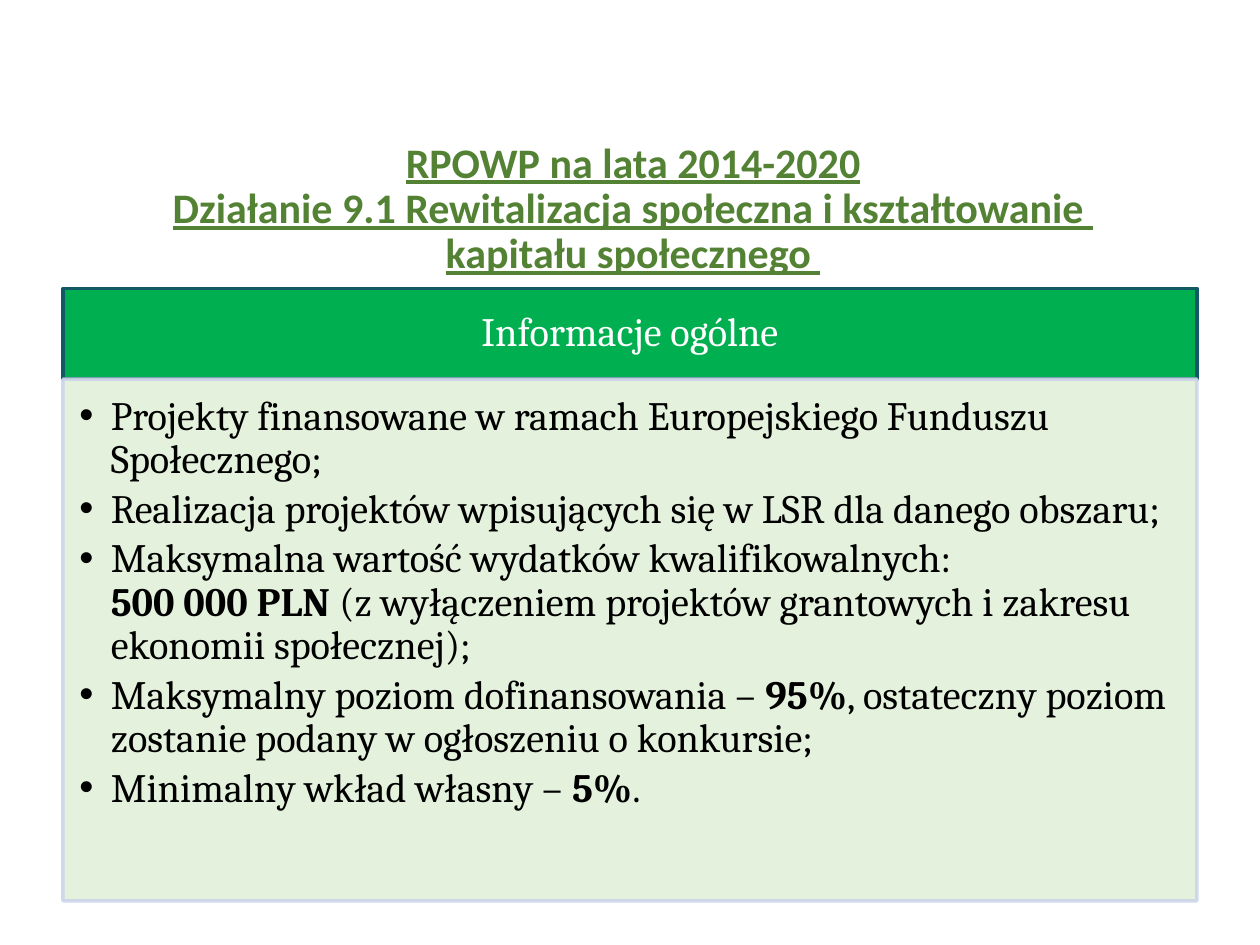
from lxml.etree import SubElement
from pptx import Presentation
from pptx.dml.color import RGBColor
from pptx.enum.shapes import MSO_SHAPE as SHAPE
from pptx.enum.text import MSO_ANCHOR as ANCHOR, PP_ALIGN as ALIGN
from pptx.oxml.ns import qn
from pptx.util import Inches, Pt

WIDTH, HEIGHT = Inches(10), Inches(7.5)
WHITE = RGBColor(0xFF, 0xFF, 0xFF)
BLACK = RGBColor(0x00, 0x00, 0x00)
OLIVE = RGBColor(0x54, 0x82, 0x35)
GREEN = RGBColor(0x00, 0xB0, 0x50)
TEAL = RGBColor(0x11, 0x59, 0x64)
PALE_GREEN = RGBColor(0xE2, 0xF0, 0xD9)
PALE_BLUE = RGBColor(0xCC, 0xD5, 0xEA)

TITLE_FONT = dict(name="Calibri", size=Pt(24), bold=True, underline=True)
PANEL_FONT = dict(name="Cambria", size=Pt(23))
TITLE = ("RPOWP na lata 2014-2020\v"
         "Działanie 9.1 Rewitalizacja społeczna i kształtowanie \v"
         "kapitału społecznego ")
HEADING = "Informacje ogólne"
POINTS = [
    [("Projekty finansowane w ramach Europejskiego Funduszu Społecznego;", False)],
    [("Realizacja projektów wpisujących się w LSR dla danego obszaru;", False)],
    [("Maksymalna wartość wydatków kwalifikowalnych:", False),
     ("\v500 000 PLN ", True),
     ("(z wyłączeniem projektów grantowych i zakresu ekonomii społecznej);", False)],
    [("Maksymalny poziom dofinansowania – ", False), ("95%", True),
     (", ostateczny poziom zostanie podany w ogłoszeniu o konkursie;", False)],
    [("Minimalny wkład własny – ", False), ("5%", True), (".", False)],
]


def apply(target, values):
    """Set every attribute named in a dict."""
    for name, value in values.items():
        setattr(target, name, value)


def place(sp, box):
    """Position a shape in a box given in inches."""
    sp.left, sp.top, sp.width, sp.height = map(Inches, box)


def set_insets(tf, left, top, right, bottom):
    """Set the four text margins in inches."""
    apply(tf, dict(margin_left=Inches(left), margin_top=Inches(top),
                   margin_right=Inches(right), margin_bottom=Inches(bottom)))


def add_run(p, text, color, **font):
    """Append a run, turning a leading vertical tab into a line break."""
    if text.startswith("\v"):
        p.add_line_break()
    r = p.add_run()
    r.text = text.lstrip("\v")
    apply(r.font, font)
    r.font.color.rgb = color


def set_alpha(color_format, percent):
    """Make a solid fill partly transparent."""
    for color in color_format._xPr.iter(qn("a:srgbClr")):
        SubElement(color, qn("a:alpha"), val=str(percent * 1000))


def add_panel(slide, box, fill, line):
    """Add an outlined rectangle and return it."""
    sp = slide.shapes.add_shape(SHAPE.RECTANGLE, *map(Inches, box))
    sp.shadow.inherit = False
    sp.fill.solid()
    sp.fill.fore_color.rgb = fill
    sp.line.color.rgb = line
    sp.line.width = Pt(2)
    sp.text_frame.word_wrap = True
    return sp


def add_title(slide, box):
    """Fill and format the title placeholder."""
    sp = slide.shapes.title
    place(sp, box)
    tf = sp.text_frame
    apply(tf, dict(word_wrap=True, vertical_anchor=ANCHOR.MIDDLE))
    p = tf.paragraphs[0]
    p.text = TITLE
    apply(p, dict(alignment=ALIGN.CENTER, line_spacing=0.9))
    for r in p.runs:
        apply(r.font, TITLE_FONT)
        r.font.color.rgb = OLIVE


def add_heading(slide, box):
    """Add the green heading bar."""
    tf = add_panel(slide, box, GREEN, TEAL).text_frame
    set_insets(tf, 0.18, 0.1, 0.18, 0.1)
    tf.vertical_anchor = ANCHOR.MIDDLE
    p = tf.paragraphs[0]
    apply(p, dict(alignment=ALIGN.CENTER, line_spacing=0.9))
    add_run(p, HEADING, WHITE, **PANEL_FONT)


def add_points(slide, box):
    """Add the pale panel with its bulleted list."""
    sp = add_panel(slide, box, PALE_GREEN, PALE_BLUE)
    for color in sp._element.spPr.iter(qn("a:srgbClr")):
        SubElement(color, qn("a:alpha"), val="90000")
    tf = sp.text_frame
    set_insets(tf, 0.13, 0.13, 0.18, 0.2)
    tf.vertical_anchor = ANCHOR.TOP
    for i, runs in enumerate(POINTS):
        p = tf.add_paragraph() if i else tf.paragraphs[0]
        apply(p, dict(alignment=ALIGN.LEFT, line_spacing=0.9, space_after=Pt(3.5)))
        pPr = p._p.get_or_add_pPr()
        pPr.set("marL", str(Inches(0.25)))
        pPr.set("indent", str(Inches(-0.25)))
        SubElement(pPr, qn("a:buFont"), typeface="Arial")
        SubElement(pPr, qn("a:buChar"), char="•")
        for text, bold in runs:
            add_run(p, text, BLACK, bold=bold, **PANEL_FONT)


def main():
    """Build and save the slide."""
    prs = Presentation()
    prs.slide_width, prs.slide_height = WIDTH, HEIGHT
    slide = prs.slides.add_slide(prs.slide_layouts[5])
    left, width, top, heading_height = 0.5, 9, 2.29, 0.72
    add_title(slide, (0.42, 1.11, 9.21, 1.11))
    add_heading(slide, (left, top, width, heading_height))
    add_points(slide, (left, top + heading_height, width, 4.14))
    prs.save("out.pptx")


if __name__ == "__main__":
    main()
